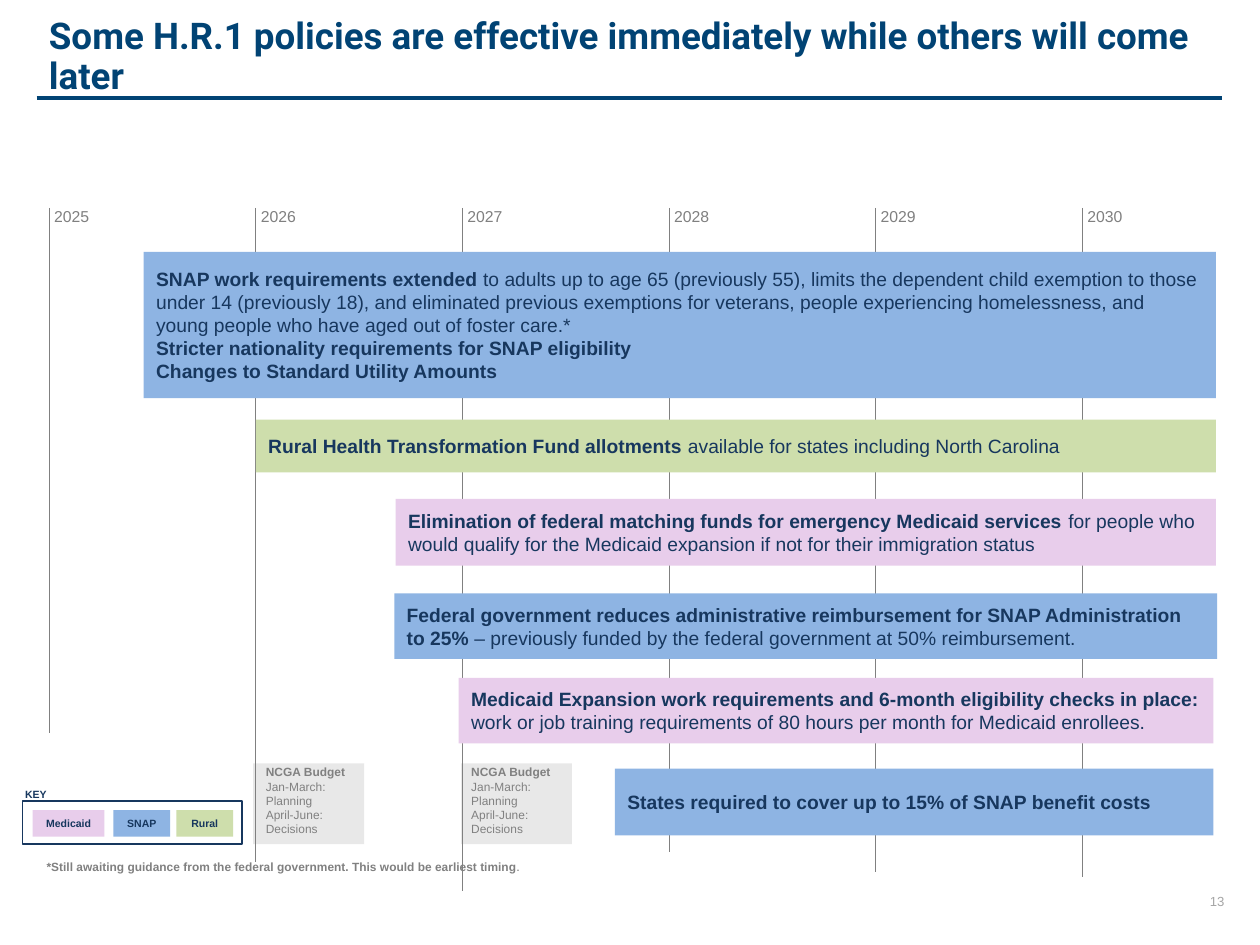
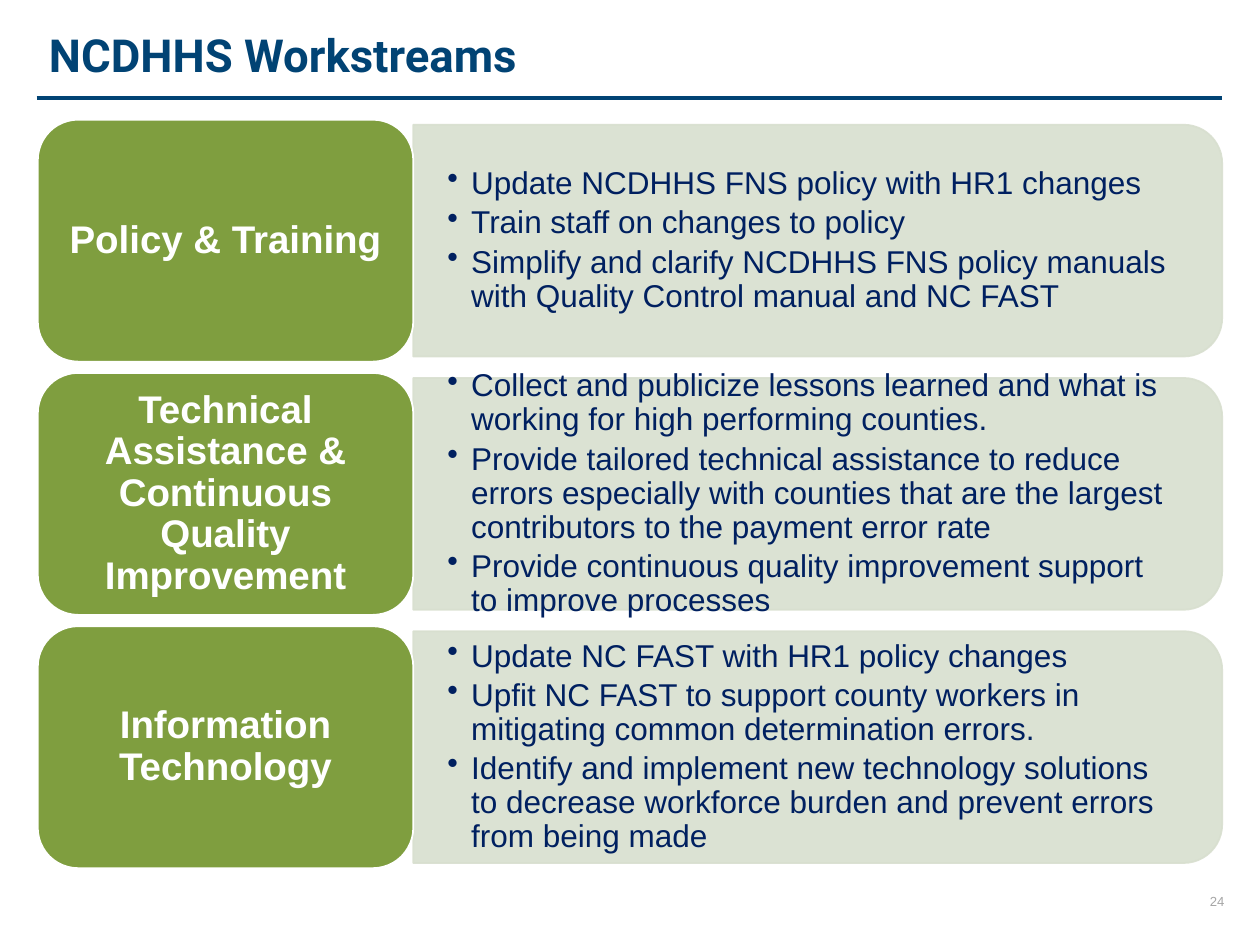
from lxml import etree
from pptx import Presentation
from pptx.dml.color import RGBColor
from pptx.enum.shapes import MSO_CONNECTOR, MSO_SHAPE as Shape
from pptx.enum.text import MSO_ANCHOR as Anchor, PP_ALIGN as Align
from pptx.oxml.ns import qn
from pptx.util import Inches, Pt

WHITE = RGBColor(0xFF, 0xFF, 0xFF)
TITLE_BLUE = RGBColor(0x01, 0x43, 0x74)
NAVY = RGBColor(0x17, 0x37, 0x5E)
BULLET_NAVY = RGBColor(0x00, 0x20, 0x60)
GRAY = RGBColor(0x80, 0x80, 0x80)
NUMBER_GRAY = RGBColor(0xA6, 0xA6, 0xA6)
BUDGET_GRAY = RGBColor(0xD9, 0xD9, 0xD9)
SNAP_BLUE = RGBColor(0x8E, 0xB4, 0xE3)
MEDICAID_PINK = RGBColor(0xE8, 0xCD, 0xEB)
RURAL_GREEN = RGBColor(0xCE, 0xDE, 0xAC)
STREAM_GREEN = RGBColor(0x7F, 0x9E, 0x3F)
PANEL_GREEN = RGBColor(0xD8, 0xDF, 0xCF)


def add_box(slide, at, fill=None, line=None, kind=Shape.RECTANGLE, opacity=100):
    if fill is None:
        return slide.shapes.add_textbox(*map(Inches, at))
    box = slide.shapes.add_shape(kind, *map(Inches, at))
    box.shadow.inherit = False
    box.fill.solid()
    box.fill.fore_color.rgb = fill
    if line is None:
        box.line.fill.background()
    else:
        box.line.color.rgb = line
        box.line.width = Pt(1)
    if opacity < 100:
        for color in box.fill._xPr.iter(qn("a:srgbClr")):
            etree.SubElement(color, qn("a:alpha"), val=str(opacity * 1000))
    return box


def write(box, paragraphs, size, color, font="Arial", align=Align.LEFT,
          anchor=Anchor.MIDDLE, insets=(0.1, 0.05), spacing=None):
    frame = box.text_frame
    frame.word_wrap = True
    frame.vertical_anchor = anchor
    frame.margin_left = frame.margin_right = Inches(insets[0])
    frame.margin_top = frame.margin_bottom = Inches(insets[1])
    for index, runs in enumerate(paragraphs):
        paragraph = frame.add_paragraph() if index else frame.paragraphs[0]
        paragraph.alignment = align
        if spacing:
            paragraph.line_spacing = spacing
        for text, bold in runs:
            run = paragraph.add_run()
            run.text = text
            run.font.name = font
            run.font.size = Pt(size)
            run.font.bold = bold
            run.font.color.rgb = color
    return frame


deck = Presentation()
deck.slide_width = Inches(10)
deck.slide_height = Inches(7.5)

TITLES = [
    ("Some H.R.1 policies are effective immediately while others will come later", 21, "13"),
    ("NCDHHS Workstreams", 26, "24"),
]
YEAR_ENDS = [5.82, 6.84, 7.07, 6.76, 6.92, 6.96]
rules = [(0.29, 0.78, 9.7, 0.78, TITLE_BLUE, 2.25)]
year_lines = [(0.39 + 1.64 * i, 1.65, 0.39 + 1.64 * i, end, GRAY, 0.5)
              for i, end in enumerate(YEAR_ENDS)]

slides = [deck.slides.add_slide(deck.slide_layouts[6]) for _ in TITLES]
timeline, workstreams = slides

for left in (2.01, 3.66):
    add_box(timeline, (left, 6.06, 0.88, 0.64), BUDGET_GRAY, opacity=59)

for slide, (title, size, number), lines in zip(slides, TITLES, (rules + year_lines, rules)):
    write(add_box(slide, (0.29, 0.13, 9.43, 0.65)), [[(title, True)]],
          size, TITLE_BLUE, "Roboto", spacing=0.9)
    write(add_box(slide, (9.49, 7.09, 0.34, 0.13)), [[(number, False)]],
          7.5, NUMBER_GRAY, align=Align.CENTER, insets=(0, 0))
    for x1, y1, x2, y2, color, width in lines:
        rule = slide.shapes.add_connector(MSO_CONNECTOR.STRAIGHT, *map(Inches, (x1, y1, x2, y2)))
        rule.line.color.rgb = color
        rule.line.width = Pt(width)
        etree.SubElement(rule._element.spPr, qn("a:effectLst"))

for i in range(len(YEAR_ENDS)):
    write(add_box(timeline, (0.36 + 1.64 * i, 1.6, 0.64, 0.42)), [[(str(2025 + i), False)]],
          9, GRAY, anchor=Anchor.TOP, insets=(0.07, 0.04))

BUDGET_CYCLE = [
    [("NCGA Budget", True)],
    [("Jan-March: Planning", False)],
    [("April-June: Decisions", False)],
]
for left in (2.04, 3.67):
    write(add_box(timeline, (left, 6.03, 0.86, 0.39)), BUDGET_CYCLE,
          6.8, GRAY, anchor=Anchor.TOP, insets=(0.07, 0.04))

POLICIES = [
    ((1.14, 2, 8.51, 1.16), SNAP_BLUE, [
        [("SNAP work requirements extended", True),
         (" to adults up to age 65 (previously 55), limits the dependent child exemption to those "
          "under 14 (previously 18), and eliminated previous exemptions for veterans, people "
          "experiencing homelessness, and young people who have aged out of foster care.*", False)],
        [("Stricter nationality requirements for SNAP eligibility", True)],
        [("Changes to Standard Utility Amounts", True)]]),
    ((2.03, 3.33, 7.62, 0.42), RURAL_GREEN, [
        [("Rural Health Transformation Fund allotments ", True),
         ("available for states including North Carolina", False)]]),
    ((3.14, 3.96, 6.51, 0.53), MEDICAID_PINK, [
        [("Elimination of federal matching funds for emergency Medicaid services", True),
         (" for people who would qualify for the Medicaid expansion if not for their "
          "immigration status", False)]]),
    ((3.13, 4.71, 6.53, 0.52), SNAP_BLUE, [
        [("Federal government reduces administrative reimbursement for SNAP Administration "
          "to 25% ", True),
         ("– previously funded by the federal government at 50% reimbursement.", False)]]),
    ((3.64, 5.38, 5.99, 0.52), MEDICAID_PINK, [
        [("Medicaid Expansion work requirements and 6-month eligibility checks in place: ", True),
         ("work or job training requirements of 80 hours per month for Medicaid enrollees.", False)]]),
    ((4.88, 6.1, 4.75, 0.53), SNAP_BLUE, [
        [("States required to cover up to 15% of SNAP benefit costs", True)]]),
]
for at, color, paragraphs in POLICIES:
    write(add_box(timeline, at, color), paragraphs, 11, NAVY)

add_box(timeline, (0.18, 6.36, 1.74, 0.34), WHITE, NAVY)
write(add_box(timeline, (0.1, 6.2, 0.75, 0.21)), [[("KEY", True)]], 6, NAVY)
for program, left, width, color in [("Medicaid", 0.26, 0.57, MEDICAID_PINK),
                                    ("SNAP", 0.9, 0.45, SNAP_BLUE),
                                    ("Rural", 1.4, 0.45, RURAL_GREEN)]:
    write(add_box(timeline, (left, 6.43, width, 0.21), color), [[(program, True)]],
          6, NAVY, align=Align.CENTER)

footnote = write(
    add_box(timeline, (0.3, 6.78, 4.07, 0.18)),
    [[("*Still awaiting guidance from the federal government. This would be earliest timing", True),
      (".", True)]],
    6.8, GRAY, anchor=Anchor.TOP, insets=(0.07, 0.04))
footnote.paragraphs[0].runs[1].font.size = Pt(5.2)

STREAMS = [
    ("Policy & Training", [
        "Update NCDHHS FNS policy with HR1 changes",
        "Train staff on changes to policy",
        "Simplify and clarify NCDHHS FNS policy manuals with Quality Control manual and NC FAST"]),
    ("Technical Assistance & Continuous Quality Improvement", [
        "Collect and publicize lessons learned and what is working for high performing counties.",
        "Provide tailored technical assistance to reduce errors especially with counties that are "
        "the largest contributors to the payment error rate",
        "Provide continuous quality improvement support to improve processes"]),
    ("Information Technology", [
        "Update NC FAST with HR1 policy changes",
        "Upfit NC FAST to support county workers in mitigating common determination errors.",
        "Identify and implement new technology solutions to decrease workforce burden and prevent "
        "errors from being made"]),
]
for i, (stream, tasks) in enumerate(STREAMS):
    top = 0.95 + 2.01 * i
    panel = add_box(workstreams, (5.57, top - 2.25, 1.84, 6.42), PANEL_GREEN, PANEL_GREEN,
                    Shape.ROUND_2_SAME_RECTANGLE, 90)
    panel.rotation = 90
    task_list = write(add_box(workstreams, (3.28, top + 0.13, 6.33, 1.66)),
                      [[(task, False)] for task in tasks],
                      18, BULLET_NAVY, insets=(0.27, 0.14), spacing=0.9)
    for paragraph in task_list.paragraphs:
        paragraph.space_after = Pt(3)
        properties = paragraph._p.get_or_add_pPr()
        properties.set("marL", str(Inches(0.19)))
        properties.set("indent", str(Inches(-0.19)))
        etree.SubElement(properties, qn("a:buChar"), char="•")
    write(add_box(workstreams, (0.3, top, 2.98, 1.92), STREAM_GREEN, WHITE, Shape.ROUNDED_RECTANGLE),
          [[(stream, True)]], 22, WHITE, align=Align.CENTER, insets=(0.09, 0.05), spacing=0.9)

deck.save("out.pptx")
